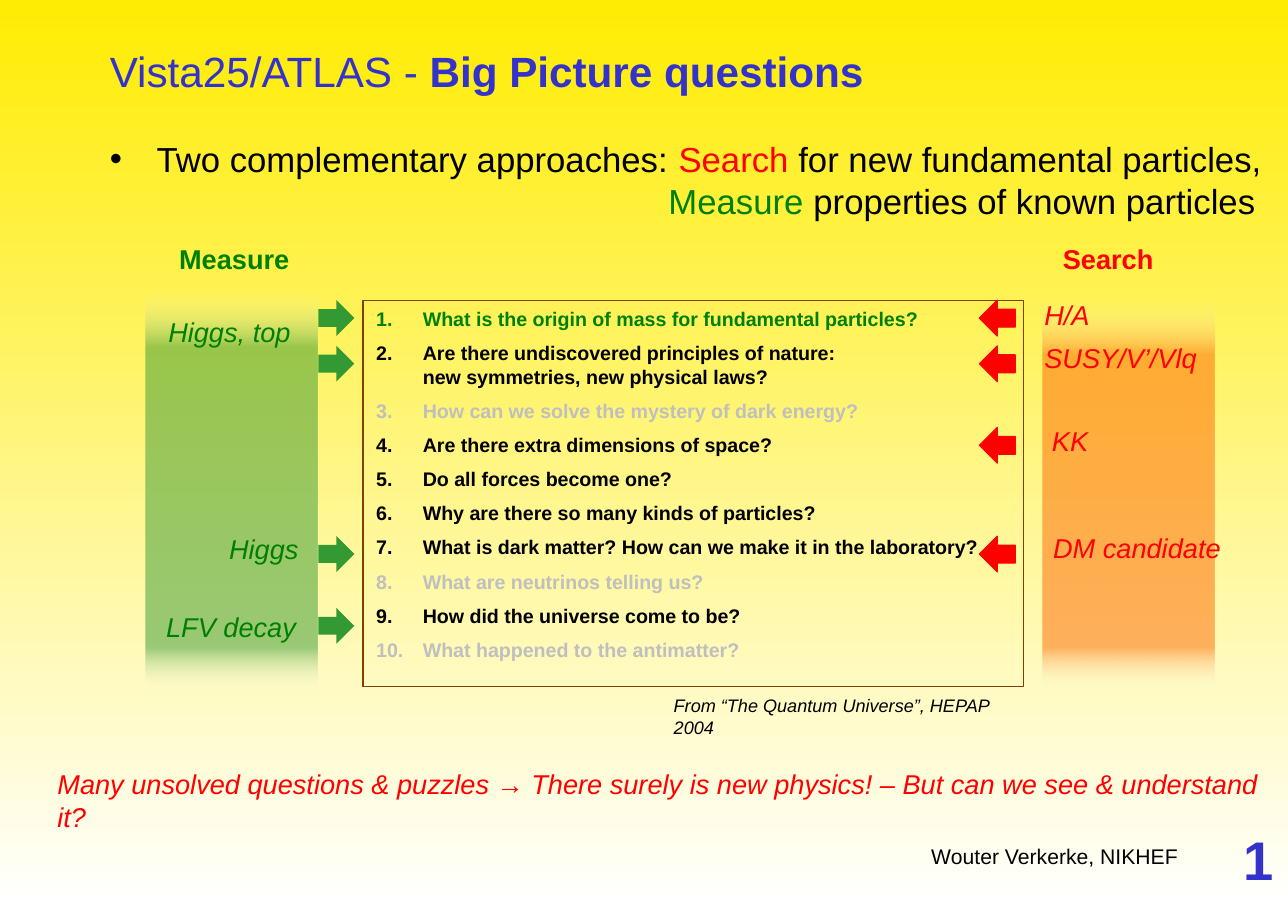
from lxml import etree
from pptx import Presentation
from pptx.dml.color import RGBColor
from pptx.enum.shapes import MSO_SHAPE
from pptx.enum.text import MSO_ANCHOR, MSO_AUTO_SIZE, PP_ALIGN
from pptx.oxml.ns import qn
from pptx.util import Pt

PX = 9144  # EMU, 100 px to the inch
RECT, ARROW = MSO_SHAPE.RECTANGLE, MSO_SHAPE.RIGHT_ARROW
TOP, MIDDLE = MSO_ANCHOR.TOP, MSO_ANCHOR.MIDDLE
LEFT, RIGHT = PP_ALIGN.LEFT, PP_ALIGN.RIGHT
FIXED = MSO_AUTO_SIZE.NONE

BLUE, BLACK, GREY = "3333CC", "000000", "BFBFBF"
RED, GREEN, LEAF, ORANGE = "FF0000", "008000", "339933", "FF6600"
WHITE, YELLOW, BROWN = "FFFFFF", "FFEC02", "804000"

QUESTIONS = [
    ("What is the origin of mass for fundamental particles?", GREEN),
    ("Are there undiscovered principles of nature:\n"
     "new symmetries, new physical laws?", BLACK),
    ("How can we solve the mystery of dark energy?", GREY),
    ("Are there extra dimensions of space?", BLACK),
    ("Do all forces become one?", BLACK),
    ("Why are there so many kinds of particles?", BLACK),
    ("What is dark matter? How can we make it in the laboratory?", BLACK),
    ("What are neutrinos telling us?", GREY),
    ("How did the universe come to be?", BLACK),
    ("What happened to the antimatter?", GREY),
]

# text, left, top, width, colour
HEADS = [
    ("Measure", 155, 218, 124, GREEN),
    ("Search", 968, 218, 105, RED),
]
TOPICS = [
    ("Higgs, top", 145, 285, 140, GREEN),
    ("Higgs", 201, 485, 84, GREEN),
    ("LFV decay", 143, 556, 142, GREEN),
    ("H/A", 951, 269, 69, RED),
    ("SUSY/V’/Vlq", 951, 309, 163, RED),
    ("KK", 958, 385, 59, RED),
    ("DM candidate", 959, 484, 179, RED),
]


def rgb(code):
    return RGBColor.from_string(code)


def place(shape, left, top, width, height):
    shape.left, shape.top = left * PX, top * PX
    shape.width, shape.height = width * PX, height * PX


def setup(frame, inset=(10, 5), anchor=TOP):
    """Set wrapping, margins and anchor of a text frame."""
    frame.word_wrap = True
    frame.auto_size = FIXED
    frame.vertical_anchor = anchor
    frame.margin_left = frame.margin_right = inset[0] * PX
    frame.margin_top = frame.margin_bottom = inset[1] * PX
    return frame


def write(par, text, size=18, color=BLACK, bold=False, italic=False):
    """Add text to a paragraph; a newline becomes a line break."""
    for num, line in enumerate(text.split("\n")):
        if num:
            par.add_line_break()
            etree.SubElement(par._p[-1], qn("a:rPr"), sz=str(size * 100))
        run = par.add_run()
        run.text = line
        font = run.font
        font.name, font.size = "Arial", Pt(size)
        font.bold, font.italic = bold, italic
        font.color.rgb = rgb(color)


def bullet(par, tag, left, hang, **attrs):
    """Give a paragraph its indents and its bullet element."""
    props = par._p.get_or_add_pPr()
    props.set("marL", str(left * PX))
    props.set("indent", str(-hang * PX))
    etree.SubElement(props, qn(tag), **attrs)


def shade(fill, node, stops):
    """Fill upward with stops of place, colour and opacity in percent."""
    fill.gradient()
    fill.gradient_angle = 90
    stop_list = next(node.iter(qn("a:gsLst")))
    for old in list(stop_list):
        stop_list.remove(old)
    for pos, color, alpha in stops:
        stop = etree.SubElement(stop_list, qn("a:gs"), pos=str(pos * 1000))
        tint = etree.SubElement(stop, qn("a:srgbClr"), val=color)
        if alpha < 100:
            etree.SubElement(tint, qn("a:alpha"), val=str(alpha * 1000))


def shape(slide, kind, box, fill=None, line=None):
    item = slide.shapes.add_shape(kind, *(n * PX for n in box))
    item.shadow.inherit = False
    if fill:
        item.fill.solid()
        item.fill.fore_color.rgb = rgb(fill)
    else:
        item.fill.background()
    if line:
        item.line.color.rgb = rgb(line)
        item.line.width = Pt(0.75)
    else:
        item.line.fill.background()
    return item


def band(slide, box, color):
    item = shape(slide, RECT, box)
    shade(item.fill, item.element, [
        (0, WHITE, 0), (11, color, 50), (86, color, 50), (100, WHITE, 0)])


def label(slide, text, box, inset=(10, 5), align=LEFT, **style):
    item = slide.shapes.add_textbox(*(n * PX for n in box))
    par = setup(item.text_frame, inset).paragraphs[0]
    par.alignment = align
    write(par, text, **style)


def header(slide):
    title, body = slide.shapes.title, slide.placeholders[1]
    place(title, 89, 37, 1007, 56)
    par = setup(title.text_frame, (12, 6), MIDDLE).paragraphs[0]
    par.alignment = LEFT
    write(par, "Vista25/ATLAS - ", size=28, color=BLUE)
    write(par, "Big Picture questions", size=28, color=BLUE, bold=True)

    place(body, 89, 121, 1087, 640)
    frame = setup(body.text_frame, (12, 6))
    first, second = frame.paragraphs[0], frame.add_paragraph()
    bullet(first, "a:buChar", 43, 43, char="•")
    bullet(second, "a:buNone", 514, 0)
    first.space_before = second.space_before = Pt(0)
    write(first, "Two complementary approaches: ", size=23)
    write(first, "Search ", size=23, color=RED)
    write(first, "for new fundamental particles,", size=23)
    write(second, "Measure", size=23, color=GREEN)
    write(second, " properties of known particles", size=23)


def questions(slide):
    item = shape(slide, RECT, (334, 276, 608, 355), line=BROWN)
    frame = setup(item.text_frame, (12, 6))
    for num, (text, color) in enumerate(QUESTIONS):
        par = frame.add_paragraph() if num else frame.paragraphs[0]
        bullet(par, "a:buAutoNum", 43, 43, type="arabicPeriod")
        par.alignment = LEFT
        par.space_before = Pt(7 if num else 0)
        write(par, text, size=13, color=color, bold=True)


def arrows(slide):
    for top in (276, 318, 493, 559):
        shape(slide, ARROW, (293, top, 33, 33), LEAF)
    for top in (276, 318, 393, 493):
        item = shape(slide, ARROW, (901, top, 33, 33), RED, RED)
        item.rotation = 180


def main():
    deck = Presentation()
    deck.slide_width, deck.slide_height = 1185 * PX, 835 * PX
    slide = deck.slides.add_slide(deck.slide_layouts[1])
    shade(slide.background.fill, slide.element,
          [(0, WHITE, 100), (100, YELLOW, 100)])
    band(slide, (959, 276, 158, 358), ORANGE)
    band(slide, (134, 268, 158, 367), LEAF)
    header(slide)
    questions(slide)
    arrows(slide)
    for text, left, top, width, color in HEADS:
        label(slide, text, (left, top, width, 40), color=color, bold=True)
    for text, left, top, width, color in TOPICS:
        label(slide, text, (left, top, width, 40), color=color, italic=True)
    label(slide, "From “The Quantum Universe”, HEPAP 2004",
          (610, 634, 349, 30), size=12, italic=True)
    label(slide, "Many unsolved questions & puzzles → There surely is "
          "new physics! – But can we see & understand it?",
          (43, 701, 1135, 40), color=RED, italic=True)
    label(slide, "Wouter Verkerke, NIKHEF", (89, 770, 1007, 46),
          inset=(12, 6), align=RIGHT, size=14)
    label(slide, "1", (1134, 755, 48, 71), size=36, color=BLUE, bold=True)
    deck.save("out.pptx")


if __name__ == "__main__":
    main()
